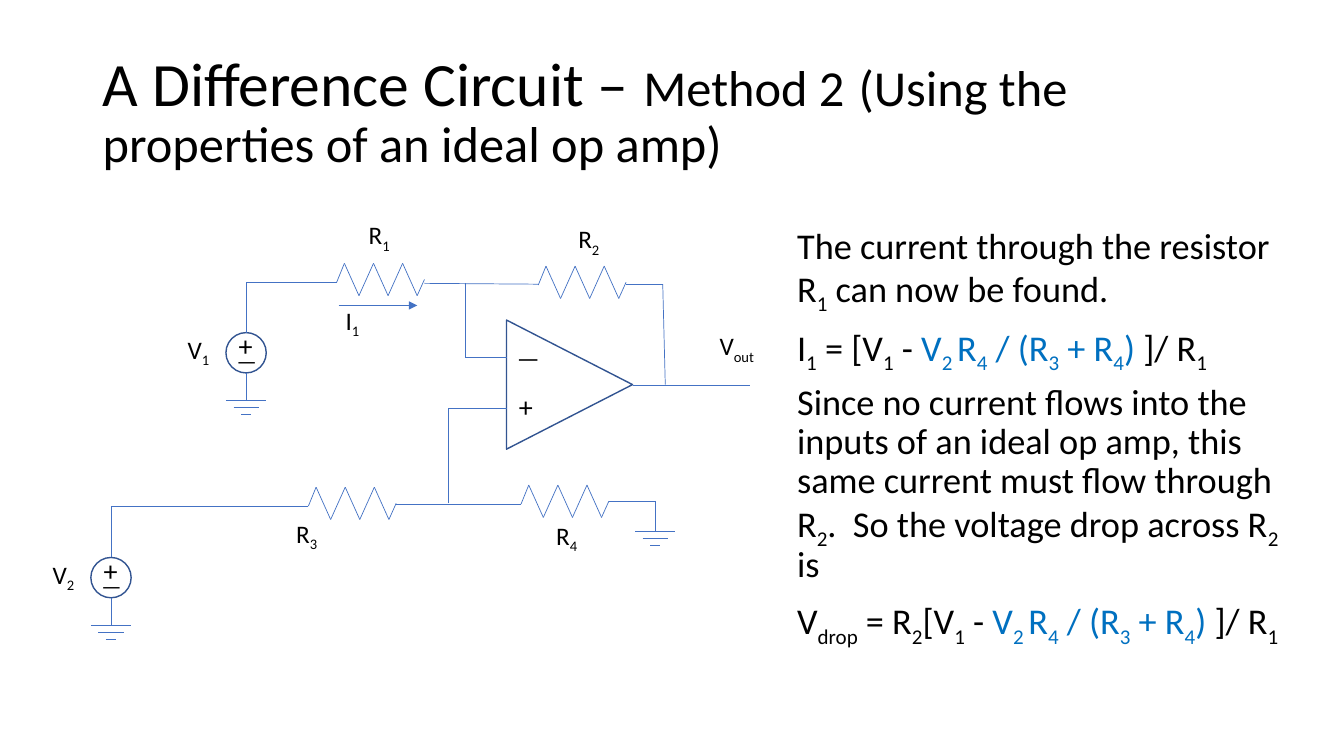
from itertools import pairwise
from pptx import Presentation
from pptx.dml.color import RGBColor
from pptx.enum import shapes, text
from pptx.oxml.ns import qn
from pptx.util import Pt
from lxml import etree

# Content: ~ toggles subscript, | toggles the accent colour
TITLE = [("A Difference Circuit – ", 44), ("Method 2", 36), (" ", 44),
         ("(Using the properties of an ideal op amp)", 36)]
RATIO = "|V~2 ~R~4~ / (R~3~ + R~4~) |"
BODY = [
    "The current through the resistor R~1~ can now be found.",
    f"I~1~ = [V~1~ - {RATIO}]/ R~1~",
    "Since no current flows into the inputs of an ideal op amp, this same "
    "current must flow through R~2~.  So the voltage drop across R~2~ is",
    f"V~drop~ = R~2~[V~1~ - {RATIO}]/ R~1~",
]
COLORS = {"text": "000000", "accent": "0070C0", "wire": "4472C4", "outline": "325491"}

# Circuit, in points
LABELS = [("R~1~", 256.3, 153.4), ("R~2~", 406, 156.2), ("R~3~", 204.5, 366.5),
          ("R~4~", 390.2, 367.9), ("V~out~", 506.9, 232.6), ("I~1~", 239.8, 214.6)]
RESISTORS = [(240.5, 201.6), (384.5, 203.6), (220.3, 361.5), (372.2, 360)]
SOURCES = [("V~1~", 175.8, 252, 201.6), ("V~2~", 79.3, 412.6, 362)]  # centre, wire level
WIRES = [
    [(175.8, 201.6), (240.5, 201.6)],                    # V1 to R1
    [(303.1, 202.4), (385, 203)],                        # R1 to R2
    [(332.6, 202.4), (332.6, 255.6), (362, 255.6)],      # inverting input
    [(447.1, 203), (473.4, 203), (475.2, 274.7)],        # feedback
    [(452.2, 275), (535.7, 275)],                        # output
    [(320.4, 359.6), (320.4, 291.6), (362, 291.6)],      # non-inverting input
    [(79.3, 362), (220.3, 362)],                         # V2 to R3
    [(283, 360), (372.2, 360)],                          # R3 to R4
    [(434.9, 357.8), (468, 357.8), (468, 379.4)],        # R4 to ground
]
R4_GROUND = (468, 379.4)
CURRENT_ARROW = [(241.9, 218.2), (298.1, 218.2)]
LEAD, PITCH, PEAK, DIP, TAIL = 5.5, 10.4, -13.5, 9.6, -2
RADIUS, GROUND_DROP = 14.4, 33.8

prs = Presentation()
prs.slide_width, prs.slide_height = Pt(960), Pt(540)
slide = prs.slides.add_slide(prs.slide_layouts.get_by_name("Title Only"))


def color(name):
    return RGBColor.from_string(COLORS[name])


def set_font(p, size):
    p.font.name, p.font.size = "Calibri", Pt(size)
    p.font.color.rgb = color("text")


def add_runs(p, marked):
    for i, part in enumerate(marked.split("|")):
        for j, piece in enumerate(part.split("~")):
            if not piece:
                continue
            r = p.add_run()
            r.text = piece
            if i % 2:
                r.font.color.rgb = color("accent")
            if j % 2:
                r._r.get_or_add_rPr().set("baseline", "-25000")


def text_box(paragraphs, x, y, w, h, size):
    tf = slide.shapes.add_textbox(Pt(x), Pt(y), Pt(w), Pt(h)).text_frame
    tf.word_wrap = True
    for i, marked in enumerate(paragraphs):
        p = tf.add_paragraph() if i else tf.paragraphs[0]
        set_font(p, size)
        add_runs(p, marked)
    return tf


def label(marked, x, y, w=41, h=29, size=18):
    text_box([marked], x, y, w, h, size)


def wire(points):
    for (x1, y1), (x2, y2) in pairwise(points):
        line = slide.shapes.add_connector(
            shapes.MSO_CONNECTOR.STRAIGHT, Pt(x1), Pt(y1), Pt(x2), Pt(y2))
        line.line.color.rgb, line.line.width = color("wire"), Pt(0.5)
        etree.SubElement(line._element.spPr, qn("a:effectLst"))
    return line


def outline(kind, x, y, w, h):
    sp = slide.shapes.add_shape(kind, Pt(x), Pt(y), Pt(w), Pt(h))
    sp.shadow.inherit = False
    sp.fill.background()
    sp.line.color.rgb, sp.line.width = color("outline"), Pt(1)
    return sp


def resistor(x, y):
    zigzag = [(x + LEAD + PITCH * i, y + (DIP if i % 2 else PEAK)) for i in range(6)]
    wire([(x, y), *zigzag, (x + LEAD + 5.5 * PITCH, y + TAIL)])


def ground(x, y):
    for i, half in enumerate((14.4, 9, 3.6)):
        wire([(x - half, y + 5 * i), (x + half, y + 5 * i)])


def source(name, x, y, level):
    outline(shapes.MSO_SHAPE.OVAL, x - RADIUS, y - RADIUS, 2 * RADIUS, 2 * RADIUS)
    label("+", x - 12.4, y - 21, 24.5, 31.5, 20)
    label("—", x - 13.9, y - 7.5, 24.5, 26.6, 16)
    label(name, x - 48.8, y - 17)
    wire([(x, level), (x, y - RADIUS)])
    wire([(x, y + RADIUS), (x, y + GROUND_DROP)])
    ground(x, y + GROUND_DROP)


# Title
title = slide.shapes.title
title.left, title.top, title.width, title.height = Pt(66.2), Pt(28.8), Pt(828), Pt(104.4)
tf = title.text_frame
tf.auto_size, tf.vertical_anchor = text.MSO_AUTO_SIZE.NONE, text.MSO_ANCHOR.MIDDLE
p = tf.paragraphs[0]
p.alignment, p.line_spacing = text.PP_ALIGN.LEFT, 0.9
set_font(p, 44)
for words, size in TITLE:
    r = p.add_run()
    r.text, r.font.size = words, Pt(size)

# Op amp
amp = outline(shapes.MSO_SHAPE.ISOSCELES_TRIANGLE, 360.7, 229.7, 92.2, 90)
amp.rotation = 90
label("—", 362.2, 241.2, 24.5, 29, 18)
label("+", 363.6, 275, 24.5, 31.5, 20)

# Circuit parts
for points in WIRES:
    wire(points)
for start in RESISTORS:
    resistor(*start)
for part in SOURCES:
    source(*part)
ground(*R4_GROUND)
for part in LABELS:
    label(*part)

# Current arrow
arrow = wire(CURRENT_ARROW)
etree.SubElement(arrow.line._get_or_add_ln(), qn("a:tailEnd"), type="triangle")

# Explanation
for p in text_box(BODY, 562.3, 159.1, 379.4, 297.4, 25.9).paragraphs:
    p.line_spacing, p.space_before = 0.9, Pt(10)

prs.save("out.pptx")
